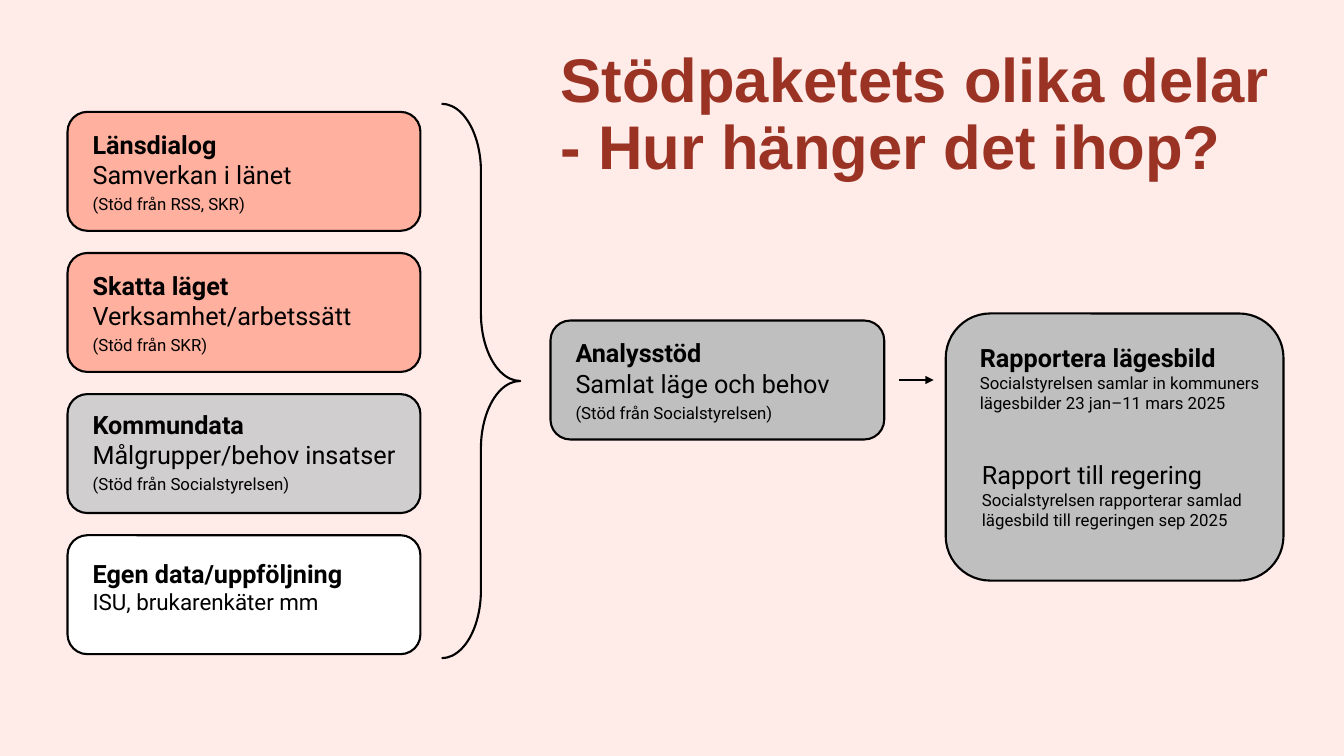
from lxml.etree import SubElement
from pptx import Presentation
from pptx.dml.color import RGBColor
from pptx.enum.shapes import MSO_CONNECTOR, MSO_SHAPE
from pptx.enum.text import MSO_ANCHOR, MSO_AUTO_SIZE, PP_ALIGN
from pptx.oxml.ns import qn
from pptx.util import Pt

PX = 9144
BLACK = RGBColor(0, 0, 0)
WHITE = RGBColor(255, 255, 255)
BLUSH = RGBColor(0xFF, 0xEB, 0xE8)
CORAL = RGBColor(0xFF, 0xB0, 0x9E)
LIGHT_GREY = RGBColor(0xD0, 0xCE, 0xCE)
GREY = RGBColor(0xBF, 0xBF, 0xBF)
RUST = RGBColor(0x9A, 0x33, 0x24)

SOURCES = [
    (CORAL, 12, [("Länsdialog", 18, True), ("Samverkan i länet", 18, False),
                 ("(Stöd från RSS, SKR)", 12, False)]),
    (CORAL, 12, [("Skatta läget", 18, True), ("Verksamhet/arbetssätt", 18, False),
                 ("(Stöd från SKR)", 12, False)]),
    (LIGHT_GREY, 10, [("Kommundata", 18, True), ("Målgrupper/behov insatser", 18, False),
                      ("(Stöd från Socialstyrelsen)", 12, False)]),
    (WHITE, 18, [("Egen data/uppföljning", 18, True), ("ISU, brukarenkäter mm", 16, False)]),
]
ANALYSIS = [("Analysstöd", 18, True), ("Samlat läge och behov", 18, False),
            ("(Stöd från Socialstyrelsen)", 12, False)]
REPORTING = [("Rapportera lägesbild", 18, True),
             ("Socialstyrelsen samlar in kommuners lägesbilder 23 jan–11 mars 2025", 12, False)]
GOVERNMENT = [("Rapport till regering", 18, False),
              ("Socialstyrelsen rapporterar samlad lägesbild till regeringen sep 2025", 12, False)]


def emu(*lengths):
    return [n * PX for n in lengths]


def set_line(line):
    line.color.rgb = BLACK
    line.width = Pt(1.5)


def add_outline(s, kind, box, fill=None):
    sp = s.shapes.add_shape(kind, *emu(*box))
    sp.shadow.inherit = False
    if fill is None:
        sp.fill.background()
    else:
        sp.fill.solid()
        sp.fill.fore_color.rgb = fill
    set_line(sp.line)
    return sp


def add_text(s, box, lines):
    tf = s.shapes.add_textbox(*emu(*box)).text_frame
    tf.word_wrap = True
    tf.text = "\n".join(text for text, _, _ in lines)
    for i, (p, (_, size, bold)) in enumerate(zip(tf.paragraphs, lines)):
        if i == 2:
            p.space_before = Pt(3)
        font = p.runs[0].font
        font.name = "Roboto"
        font.size = Pt(size)
        font.bold = bold
        font.color.rgb = BLACK


def add_arrow(s, x1, y1, x2, y2):
    cxn = s.shapes.add_connector(MSO_CONNECTOR.STRAIGHT, *emu(x1, y1, x2, y2))
    set_line(cxn.line)
    SubElement(cxn.line._get_or_add_ln(), qn("a:tailEnd"), type="triangle")
    SubElement(cxn._element.spPr, qn("a:effectLst"))


def set_title(s, box, text):
    title = s.shapes.title
    title.left, title.top, title.width, title.height = emu(*box)
    tf = title.text_frame
    tf.text = text
    tf.word_wrap = True
    tf.auto_size = MSO_AUTO_SIZE.NONE
    tf.vertical_anchor = MSO_ANCHOR.TOP
    for p in tf.paragraphs:
        p.alignment = PP_ALIGN.LEFT
        p.line_spacing = 0.9
        font = p.runs[0].font
        font.name = "Arial"
        font.size = Pt(44)
        font.bold = True
        font.color.rgb = RUST


def main():
    prs = Presentation()
    prs.slide_width, prs.slide_height = emu(1333, 750)
    s = prs.slides.add_slide(prs.slide_layouts[5])
    s.background.fill.solid()
    s.background.fill.fore_color.rgb = BLUSH

    set_title(s, (546, 44, 780, 235), "Stödpaketets olika delar\n- Hur hänger det ihop?")

    for i, (fill, inset, lines) in enumerate(SOURCES):
        top = 111 + 140 * i
        add_outline(s, MSO_SHAPE.ROUNDED_RECTANGLE, (67, top, 350, 118), fill)
        add_text(s, (82, top + inset, 336, 95), lines)

    brace = add_outline(s, MSO_SHAPE.RIGHT_BRACE, (438, 103, 78, 550))
    brace.adjustments[0] = 0.86

    add_outline(s, MSO_SHAPE.ROUNDED_RECTANGLE, (546, 318, 331, 118), GREY)
    add_text(s, (561, 330, 303, 95), ANALYSIS)
    add_arrow(s, 892, 377, 926, 377)

    add_outline(s, MSO_SHAPE.ROUNDED_RECTANGLE, (938, 311, 335, 265), GREY)
    add_text(s, (962, 335, 311, 81), REPORTING)
    add_text(s, (964, 451, 311, 81), GOVERNMENT)

    prs.save("out.pptx")


if __name__ == "__main__":
    main()
